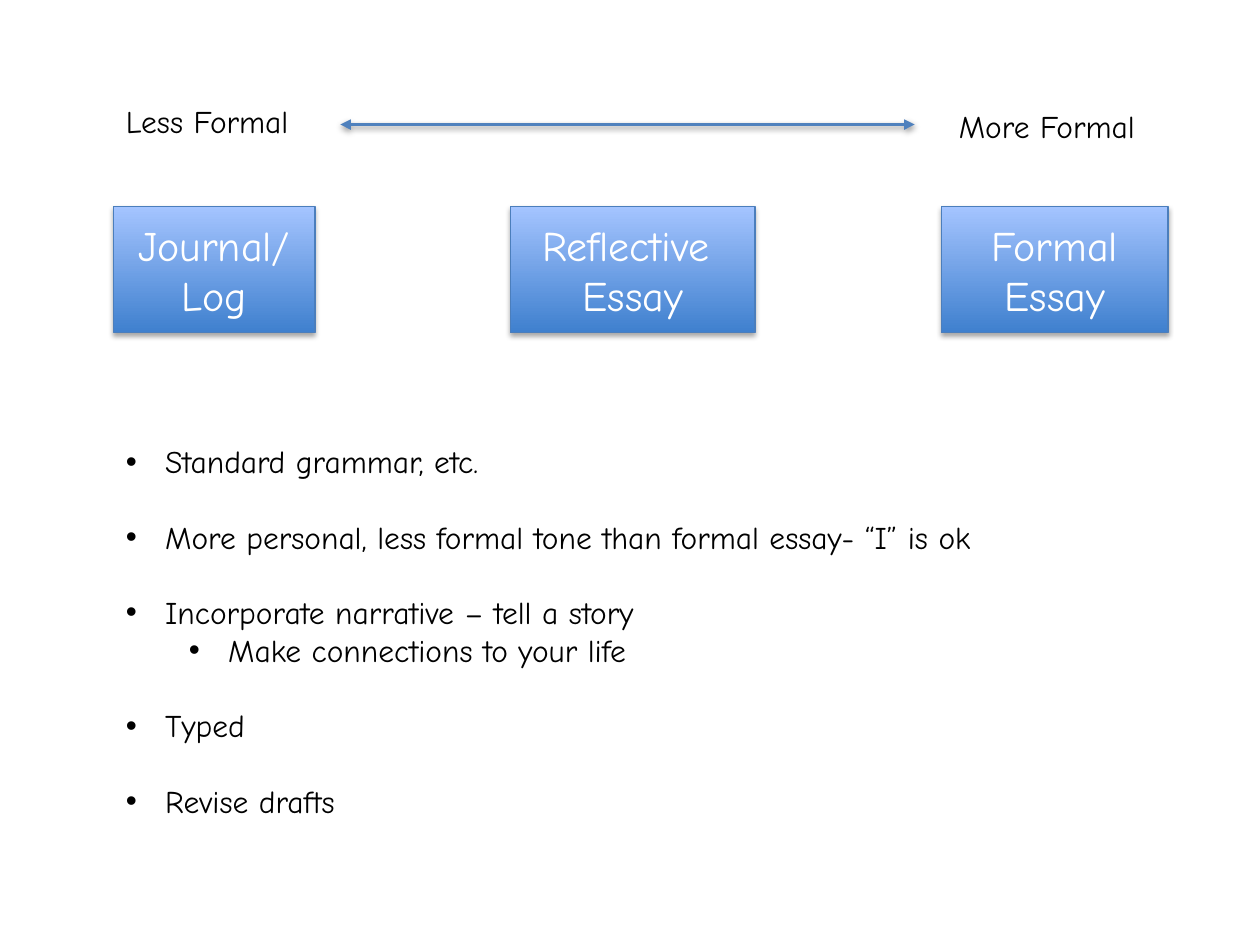
from dataclasses import dataclass

from lxml.etree import SubElement
from pptx import Presentation
from pptx.dml.color import RGBColor
from pptx.enum.shapes import MSO_CONNECTOR, MSO_SHAPE
from pptx.enum.text import MSO_ANCHOR, MSO_AUTO_SIZE, PP_ALIGN
from pptx.oxml.ns import qn
from pptx.util import Cm, Pt


@dataclass(frozen=True)
class Theme:
    """Colours, font and type sizes of the slide."""
    font: str = "Comic Neue"
    body: Pt = Pt(18)
    card: Pt = Pt(24)
    gap: Pt = Pt(21.5)
    black: RGBColor = RGBColor(0, 0, 0)
    white: RGBColor = RGBColor(255, 255, 255)
    card_bottom: RGBColor = RGBColor(0x3F, 0x80, 0xCE)
    card_top: RGBColor = RGBColor(0xA4, 0xC4, 0xFF)
    card_edge: RGBColor = RGBColor(0x4B, 0x7E, 0xBC)
    arrow: RGBColor = RGBColor(0x4F, 0x81, 0xBD)


THEME = Theme()
STAGES = [
    (0, 4.06, ["Journal/", "Log"]),
    (8, 4.93, ["Reflective ", "Essay"]),
    (16.69, 4.57, ["Formal", "Essay"]),
]
TRAITS = [
    ("Standard grammar, etc.", 0),
    ("More personal, less formal tone than formal essay- “I” is ok", 0),
    ("Incorporate narrative – tell a story", 0),
    ("Make connections to your life", 1),
    ("Typed", 0),
    ("Revise drafts", 0),
]


def style(para, size, color):
    """Set the font of a whole paragraph."""
    para.font.name = THEME.font
    para.font.size = size
    para.font.color.rgb = color


def add_shadow(shape, distance, opacity):
    """Give a shape or connector a soft shadow that falls straight down."""
    effects = SubElement(shape._element.spPr, qn("a:effectLst"))
    shadow = SubElement(effects, qn("a:outerShdw"), blurRad=str(Pt(3.1)),
                        dist=str(Pt(distance)), dir="5400000", rotWithShape="0")
    black = SubElement(shadow, qn("a:srgbClr"), val="000000")
    SubElement(black, qn("a:alpha"), val=str(opacity * 1000))


def add_label(page, left, top, width, text):
    """Place one label at an end of the scale."""
    box = page.shapes.add_textbox(left, top, width, Cm(1.02))
    box.text_frame.word_wrap = False
    box.text_frame.auto_size = MSO_AUTO_SIZE.SHAPE_TO_FIT_TEXT
    para = box.text_frame.paragraphs[0]
    para.text = text
    style(para, THEME.body, THEME.black)


def add_scale(page, left, top):
    """Draw the scale from less to more formal, with its two-headed arrow."""
    add_label(page, left, top, Cm(4.06), "Less Formal")
    add_label(page, left + Cm(16.79), top + Cm(0.1), Cm(4.29), "More Formal")
    height = top + Cm(0.58)
    arrow = page.shapes.add_connector(MSO_CONNECTOR.STRAIGHT, left + Cm(4.57), height,
                                      left + Cm(16.15), height)
    arrow.line.color.rgb = THEME.arrow
    arrow.line.width = Pt(2)
    line = arrow.line._get_or_add_ln()
    for end in ("a:headEnd", "a:tailEnd"):
        SubElement(line, qn(end), type="triangle")
    add_shadow(arrow, 1.6, 38)


def add_card(page, left, top, width, height, words):
    """Draw one kind of writing as a shaded rectangle."""
    card = page.shapes.add_shape(MSO_SHAPE.RECTANGLE, left, top, width, height)
    card.fill.gradient()
    card.fill.gradient_angle = 90
    for stop, color in zip(card.fill.gradient_stops, (THEME.card_bottom, THEME.card_top)):
        stop.color.rgb = color
    card.line.color.rgb = THEME.card_edge
    card.line.width = Pt(0.75)
    add_shadow(card, 1.8, 35)
    frame = card.text_frame
    frame.vertical_anchor = MSO_ANCHOR.MIDDLE
    frame.text = "\n".join(words)
    for para in frame.paragraphs:
        para.alignment = PP_ALIGN.CENTER
        style(para, THEME.card, THEME.white)


def add_stages(page, left, top):
    """Draw the row of cards below the scale."""
    for offset, width, words in STAGES:
        add_card(page, left + Cm(offset), top, Cm(width), Cm(2.54), words)


def add_traits(page, left, top, width, height):
    """Write the bulleted list, with a line of space above each main point."""
    frame = page.shapes.add_textbox(left, top, width, height).text_frame
    frame.word_wrap = True
    frame.auto_size = MSO_AUTO_SIZE.SHAPE_TO_FIT_TEXT
    frame.text = "\n".join(text for text, _ in TRAITS)
    for index, (para, (_, level)) in enumerate(zip(frame.paragraphs, TRAITS)):
        style(para, THEME.body, THEME.black)
        para.level = level
        if index and level == 0:
            para.space_before = THEME.gap
        properties = para._p.get_or_add_pPr()
        properties.set("marL", str(Cm(0.79 + 1.27 * level)))
        properties.set("indent", str(-Cm(0.79)))
        SubElement(properties, qn("a:buFont"), typeface="Arial")
        SubElement(properties, qn("a:buChar"), char="•")
        properties.append(properties.find(qn("a:defRPr")))


def main():
    """Build the slide and save it."""
    deck = Presentation()
    deck.slide_width, deck.slide_height = Cm(25.4), Cm(19.05)
    page = deck.slides.add_slide(deck.slide_layouts[6])
    margin = Cm(2.29)
    add_scale(page, margin, Cm(1.93))
    add_stages(page, margin, Cm(4.17))
    add_traits(page, margin, Cm(8.79), Cm(21.11), Cm(8.71))
    deck.save("out.pptx")


if __name__ == "__main__":
    main()
